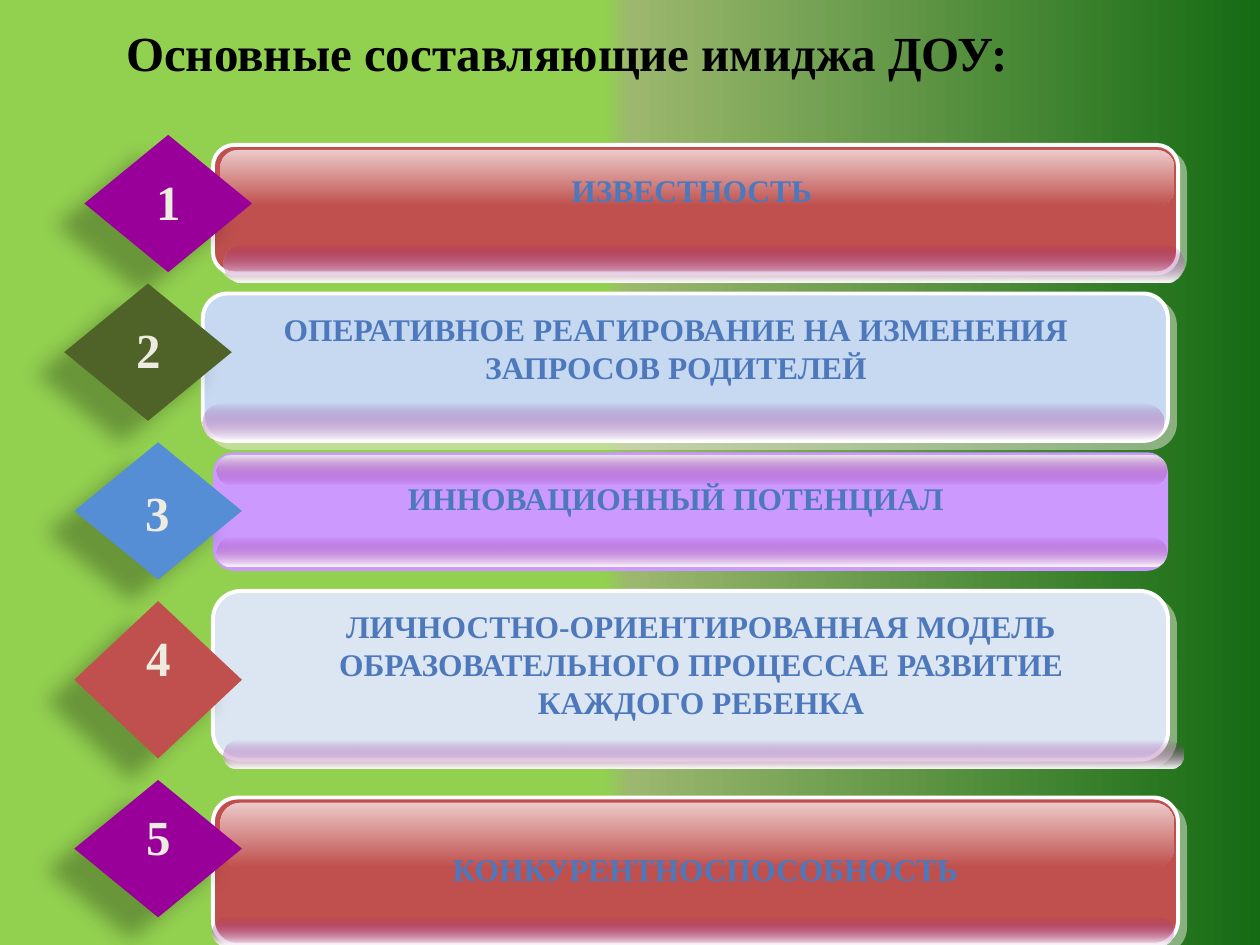
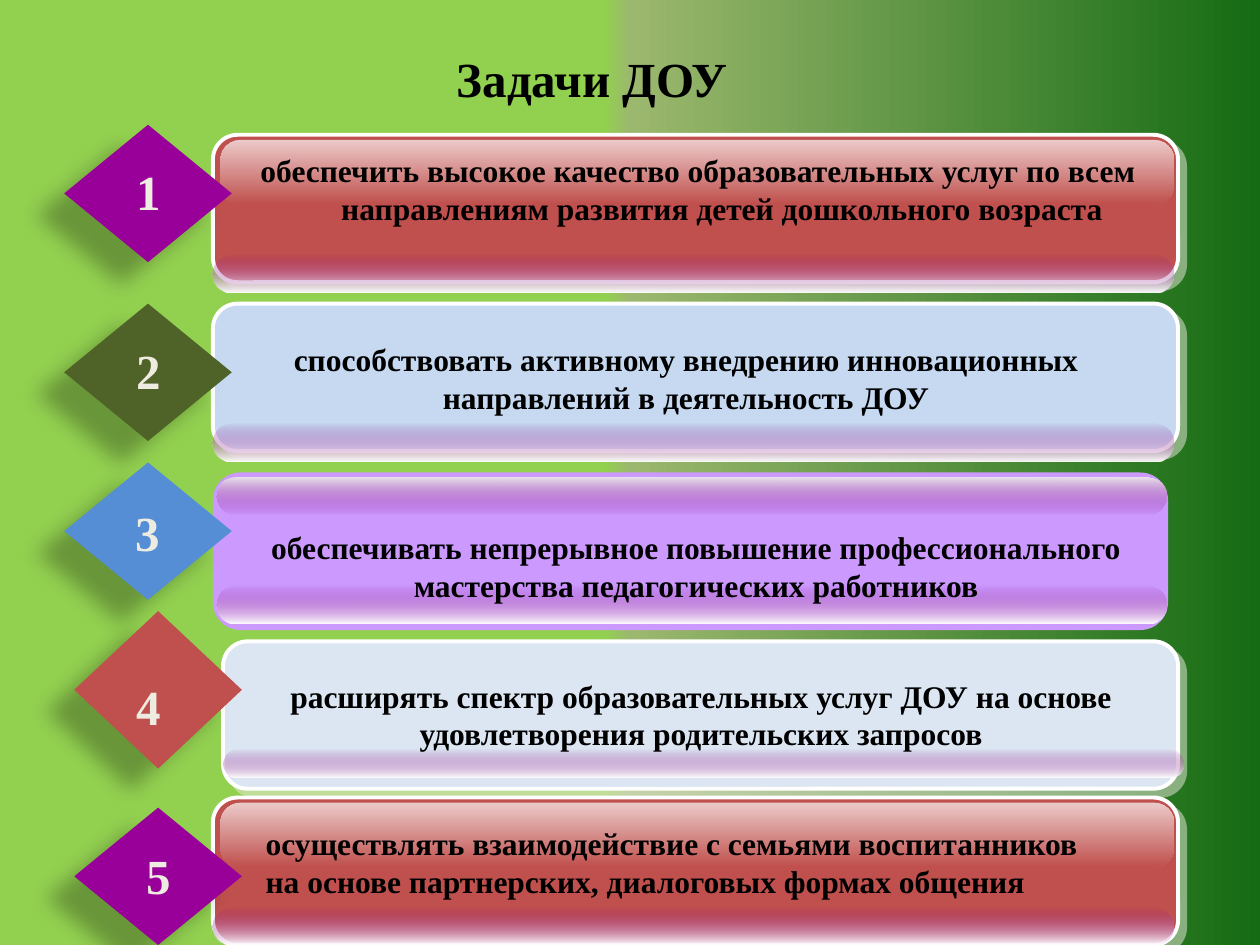
from dataclasses import dataclass

from lxml import etree
from pptx import Presentation
from pptx.dml.color import RGBColor
from pptx.enum import shapes, text
from pptx.oxml import ns
from pptx.util import Inches, Pt


@dataclass(frozen=True)
class Theme:
    font: str = "Times New Roman"
    heading_size: int = 28
    body_size: int = 18
    ink: str = "000000"
    blue_ink: str = "4D79BC"
    number_ink: str = "EEECE1"
    white: str = "FFFFFF"
    bars: tuple = ("C0504D", "C6D9F1", "CC99FF", "DCE6F2", "C0504D")
    diamonds: tuple = ("990099", "4F6228", "558ED5", "C0504D", "990099")
    backdrop: tuple = ((48, "92D050", 100), (50, "9CB86E", 100), (100, "156B13", 100))
    red_gloss: tuple = ((0, "FFFFFF", 70), (100, "C0504D", 70))
    lower_shine: tuple = ((0, "800080", 0), (100, "FFFFFF", 100))
    upper_shine: tuple = ((0, "EAE4EA", 100), (100, "800080", 0))
    bar_shadow: tuple = ("EEECE1", 50, 0, 5.7, 45)
    diamond_shadow: tuple = ("000000", 28, 11.8, 19.7, 141)


THEME = Theme()
RED, PURPLE = THEME.bars[0], THEME.bars[2]
CENTER, LEFT = text.PP_ALIGN.CENTER, text.PP_ALIGN.LEFT


@dataclass(frozen=True)
class Row:
    words: str
    bar: tuple
    diamond: tuple
    number: tuple
    words_box: tuple
    shine: tuple = None
    align: object = CENTER
    hanging: float = 0


def add_color(parent, color, opacity):
    element = etree.SubElement(parent, ns.qn("a:srgbClr"), val=color)
    if opacity < 100:
        etree.SubElement(element, ns.qn("a:alpha"), val=str(opacity * 1000))


def fill_gradient(fill, owner, stops, angle):
    fill.gradient()
    gradient = owner.find(".//" + ns.qn("a:gradFill"))
    for child in list(gradient):
        gradient.remove(child)
    stop_list = etree.SubElement(gradient, ns.qn("a:gsLst"))
    for position, color, opacity in stops:
        stop = etree.SubElement(stop_list, ns.qn("a:gs"), pos=str(position * 1000))
        add_color(stop, color, opacity)
    etree.SubElement(gradient, ns.qn("a:lin"), ang=str(angle * 60000), scaled="0")


def add_shadow(shape, color, opacity, blur, distance, direction):
    effects = shape.element.spPr.find(ns.qn("a:effectLst"))
    shadow = etree.SubElement(
        effects, ns.qn("a:outerShdw"), blurRad=str(Pt(blur)), dist=str(Pt(distance)),
        dir=str(direction * 60000), algn="ctr", rotWithShape="0")
    add_color(shadow, color, opacity)


def add_figure(slide, kind, box, fill, rounding=None, outline=None, shadow=None):
    shape = slide.shapes.add_shape(kind, *map(Inches, box))
    shape.shadow.inherit = False
    if rounding is not None:
        shape.adjustments[0] = rounding
    if isinstance(fill, str):
        shape.fill.solid()
        shape.fill.fore_color.rgb = RGBColor.from_string(fill)
    else:
        fill_gradient(shape.fill, shape.element, fill, 90)
    if outline:
        shape.line.color.rgb = RGBColor.from_string(outline)
        shape.line.width = Pt(2.25)
    else:
        shape.line.fill.background()
    if shadow:
        add_shadow(shape, *shadow)


def add_rounded(slide, box, fill, rounding=0.5, **options):
    add_figure(slide, shapes.MSO_SHAPE.ROUNDED_RECTANGLE, box, fill, rounding, **options)


def write(frame, words, size, color, align=CENTER):
    paragraph = frame.paragraphs[0]
    paragraph.alignment = align
    run = paragraph.add_run()
    run.text = words
    run.font.name = THEME.font
    run.font.size = Pt(size)
    run.font.bold = True
    run.font.color.rgb = RGBColor.from_string(color)
    return paragraph


def add_words(slide, box, words, size, color, align=CENTER, wrap=True, hanging=0):
    frame = slide.shapes.add_textbox(*map(Inches, box)).text_frame
    frame.word_wrap = wrap
    paragraph = write(frame, words, size, color, align)
    if hanging:
        properties = paragraph._p.get_or_add_pPr()
        properties.set("marL", str(Inches(hanging)))
        properties.set("indent", str(-Inches(hanging)))


def draw_framed_bar(slide, box, color):
    left, top, width, height = box
    add_rounded(slide, box, color, 0.167, outline=THEME.white, shadow=THEME.bar_shadow)
    gloss = THEME.red_gloss if color == RED else color
    add_rounded(slide, (left + 0.06, top + 0.04, width - 0.09, height * 0.44), gloss, 0.315)


def draw_shining_bar(slide, box, color):
    left, top, width, height = box
    add_rounded(slide, box, color, 0.175)
    for offset, shine in ((0.72, THEME.lower_shine), (0.03, THEME.upper_shine)):
        add_rounded(slide, (left + 0.03, top + height * offset, width - 0.04, height * 0.24), shine)


def draw_row(slide, index, row, ink):
    color = THEME.bars[index]
    draw_bar = draw_shining_bar if color == PURPLE else draw_framed_bar
    draw_bar(slide, row.bar, color)
    if row.shine:
        left, top, height = row.shine
        add_rounded(slide, (left, top, 7.62, height), THEME.lower_shine)
    left, top, height = row.diamond
    add_figure(slide, shapes.MSO_SHAPE.DIAMOND, (left, top, 1.33, height),
               THEME.diamonds[index], shadow=THEME.diamond_shadow)
    add_words(slide, (*row.number, 0.4, 0.57), str(index + 1),
              THEME.heading_size, THEME.number_ink, wrap=False)
    add_words(slide, row.words_box, row.words, THEME.body_size, ink,
              row.align, hanging=row.hanging)


def build_list_slide(presentation, title, title_box, rows, ink):
    slide = presentation.slides.add_slide(presentation.slide_layouts[5])
    for index, row in enumerate(rows):
        draw_row(slide, index, row, ink)
    heading = slide.shapes.title
    heading.left, heading.top, heading.width, heading.height = map(Inches, title_box)
    heading.text_frame.vertical_anchor = text.MSO_ANCHOR.MIDDLE
    write(heading.text_frame, title, THEME.heading_size, THEME.ink)


IMAGE_ROWS = (
    Row("ИЗВЕСТНОСТЬ", (1.69, 1.15, 7.66, 1.02), (0.67, 1.07, 1.09),
        (1.14, 1.31), (1.35, 1.31, 8.28, 0.4), (1.77, 1.94, 0.3)),
    Row("ОПЕРАТИВНОЕ РЕАГИРОВАНИЕ НА ИЗМЕНЕНИЯ ЗАПРОСОВ РОДИТЕЛЕЙ",
        (1.61, 2.33, 7.66, 1.17), (0.51, 2.25, 1.09),
        (0.98, 2.49), (1.77, 2.41, 7.19, 0.71), (1.61, 3.2, 0.3)),
    Row("ИННОВАЦИОННЫЙ ПОТЕНЦИАЛ", (1.69, 3.59, 7.58, 0.94), (0.59, 3.51, 1.09),
        (1.05, 3.78), (1.85, 3.75, 7.03, 0.4)),
    Row("ЛИЧНОСТНО-ОРИЕНТИРОВАННАЯ МОДЕЛЬ ОБРАЗОВАТЕЛЬНОГО ПРОЦЕССАЕ РАЗВИТИЕ КАЖДОГО РЕБЕНКА",
        (1.69, 4.69, 7.58, 1.34), (0.59, 4.77, 1.25),
        (1.06, 4.93), (1.93, 4.77, 7.27, 1.01), (1.77, 5.88, 0.22)),
    Row("КОНКУРЕНТНОСПОСОБНОСТЬ", (1.69, 6.33, 7.66, 1.17), (0.59, 6.19, 1.09),
        (1.06, 6.35), (1.46, 6.7, 8.28, 0.4), (1.69, 7.28, 0.22)),
)

TASK_ROWS = (
    Row("обеспечить высокое качество образовательных услуг по всем "
        "направлениям развития детей дошкольного возраста",
        (1.69, 1.07, 7.66, 1.17), (0.51, 0.99, 1.09),
        (0.98, 1.23), (1.4, 1.15, 8.28, 0.71), (1.69, 2.02, 0.3), hanging=0.38),
    Row("способствовать активному внедрению инновационных направлений в деятельность ДОУ",
        (1.69, 2.41, 7.66, 1.17), (0.51, 2.41, 1.09),
        (0.98, 2.65), (1.85, 2.65, 7.19, 0.71), (1.69, 3.36, 0.3)),
    Row("обеспечивать непрерывное повышение профессионального "
        "мастерства педагогических работников",
        (1.69, 3.75, 7.58, 1.25), (0.51, 3.67, 1.09),
        (0.97, 3.94), (2.01, 4.14, 7.03, 0.71)),
    Row("расширять спектр образовательных услуг ДОУ на основе "
        "удовлетворения родительских запросов",
        (1.77, 5.09, 7.58, 1.17), (0.59, 4.85, 1.25),
        (0.98, 5.32), (1.93, 5.32, 7.27, 0.71), (1.77, 5.95, 0.22)),
    Row("осуществлять взаимодействие с семьями воспитанников "
        "на основе партнерских, диалоговых формах общения",
        (1.69, 6.33, 7.66, 1.17), (0.59, 6.41, 1.09),
        (1.06, 6.66), (2.01, 6.49, 6.8, 0.71), (1.69, 7.2, 0.3), align=LEFT),
)


def main():
    presentation = Presentation()
    presentation.slide_width, presentation.slide_height = Inches(10), Inches(7.5)
    master = presentation.slide_master
    fill_gradient(master.background.fill, master.element, THEME.backdrop, 0)
    build_list_slide(presentation, "Основные составляющие имиджа ДОУ:",
                     (0, 0, 9, 0.82), IMAGE_ROWS, THEME.blue_ink)
    build_list_slide(presentation, "Задачи ДОУ", (0.2, 0.21, 9, 0.82), TASK_ROWS, THEME.ink)
    presentation.save("out.pptx")


if __name__ == "__main__":
    main()
